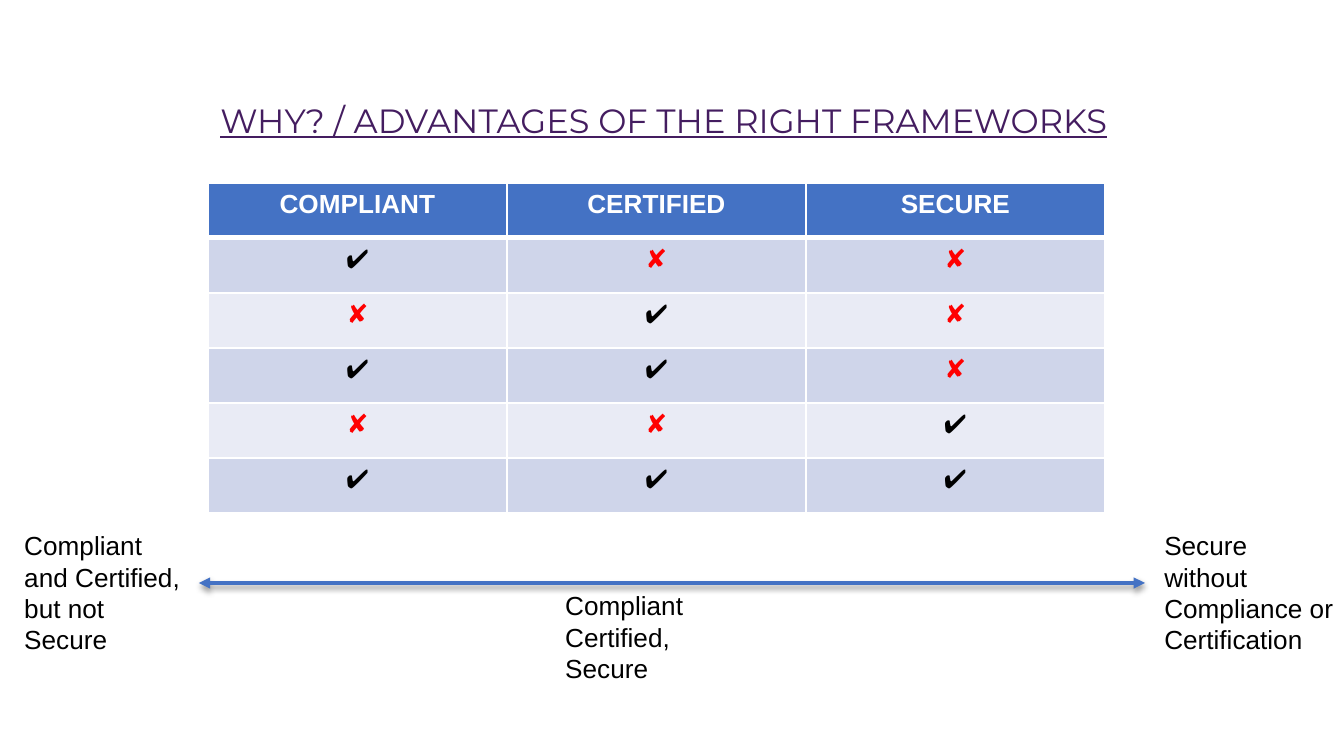
from lxml.etree import SubElement
from pptx import Presentation
from pptx.dml.color import RGBColor
from pptx.enum.shapes import MSO_CONNECTOR
from pptx.enum.text import MSO_ANCHOR, MSO_AUTO_SIZE, PP_ALIGN
from pptx.oxml import parse_xml
from pptx.oxml.ns import nsdecls, qn
from pptx.util import Emu, Pt

TITLE = "WHY? / ADVANTAGES OF THE RIGHT FRAMEWORKS"
HEADERS = ["COMPLIANT", "CERTIFIED", "SECURE"]
MARKS = ["✔✘✘", "✘✔✘", "✔✔✘", "✘✘✔", "✔✔✔"]
LABELS = [  # text, (left, top, width, height) in px
    ("Compliant and Certified, but not Secure", (11, 523, 184, 140)),
    ("Secure without Compliance or Certification", (1151, 523, 197, 140)),
    ("Compliant Certified, Secure", (552, 583, 184, 109)),
]
COLORS = {
    "title": "441D60", "accent": "4472C4", "white": "FFFFFF", "text": "000000",
    "cross": "FF0000", "odd": "CFD5EA", "even": "E9EBF5",
}
SLIDE_W, SLIDE_H = 1344, 756
TITLE_BOX = (46, 93, 1236, 54)
TABLE_LEFT, TABLE_TOP, COL_W, ROW_H = 208, 183, 299, 55
ARROW_LEFT, ARROW_RIGHT, ARROW_Y = 199, 1145, 583


def px(n):
    return Emu(round(n * 914400 / 134.4))


def rgb(name):
    return RGBColor.from_string(COLORS[name])


def write(tf, text, color="text", size=14, font="Arial", align=PP_ALIGN.LEFT,
          bold=False, underline=False):
    p = tf.paragraphs[0]
    p.alignment = align
    r = p.add_run()
    r.text = text
    f = r.font
    f.name, f.size, f.bold, f.underline = font, Pt(size), bold, underline
    f.color.rgb = rgb(color)


def set_borders(cell, bottom):
    """Give a cell white borders, 1 pt except for the bottom one."""
    tcPr = cell._tc.get_or_add_tcPr()
    widths = {"lnL": 1, "lnR": 1, "lnT": 1, "lnB": bottom}
    for i, (tag, width) in enumerate(widths.items()):
        tcPr.insert(i, parse_xml(
            f'<a:{tag} {nsdecls("a")} w="{Pt(width)}"><a:solidFill>'
            f'<a:srgbClr val="{COLORS["white"]}"/></a:solidFill></a:{tag}>'))


def add_marks_table(s):
    rows = [HEADERS, *MARKS]
    tbl = s.shapes.add_table(
        len(rows), len(HEADERS), px(TABLE_LEFT), px(TABLE_TOP),
        px(COL_W * len(HEADERS)), px(ROW_H * len(rows))).table
    for col in tbl.columns:
        col.width = px(COL_W)
    for i, row in enumerate(rows):
        header = i == 0
        fill = "accent" if header else "odd" if i % 2 else "even"
        for j, text in enumerate(row):
            cell = tbl.cell(i, j)
            cell.fill.solid()
            cell.fill.fore_color.rgb = rgb(fill)
            top_edge = 3 if i == 1 else 1
            set_borders(cell, bottom=3 if header else 1)
            if top_edge > 1:
                cell._tc.tcPr.find(qn("a:lnT")).set("w", str(Pt(top_edge)))
            color = "white" if header else "cross" if text == "✘" else "text"
            write(cell.text_frame, text, color=color, bold=header,
                  align=PP_ALIGN.CENTER)


def add_range_arrow(s):
    """Draw the double-headed arrow with its soft shadow."""
    line = s.shapes.add_connector(
        MSO_CONNECTOR.STRAIGHT, px(ARROW_LEFT), px(ARROW_Y),
        px(ARROW_RIGHT), px(ARROW_Y))
    line.line.color.rgb = rgb("accent")
    line.line.width = Pt(2)
    ln = line.line._get_or_add_ln()
    for end in ("a:headEnd", "a:tailEnd"):
        SubElement(ln, qn(end), type="triangle")
    ln.addnext(parse_xml(
        f'<a:effectLst {nsdecls("a")}><a:outerShdw blurRad="{Pt(3.1)}" '
        f'dist="{Pt(1.6)}" dir="5400000" rotWithShape="0">'
        f'<a:srgbClr val="{COLORS["text"]}"><a:alpha val="38000"/></a:srgbClr>'
        '</a:outerShdw></a:effectLst>'))


def main():
    prs = Presentation()
    prs.slide_width, prs.slide_height = px(SLIDE_W), px(SLIDE_H)
    s = prs.slides.add_slide(prs.slide_layouts[5])

    title = s.shapes.title
    title.left, title.top, title.width, title.height = map(px, TITLE_BOX)
    tf = title.text_frame
    tf.auto_size = MSO_AUTO_SIZE.NONE
    tf.vertical_anchor = MSO_ANCHOR.TOP
    write(tf, TITLE, color="title", size=18, font="Montserrat",
          align=PP_ALIGN.CENTER, underline=True)

    add_marks_table(s)
    add_range_arrow(s)
    for text, box in LABELS:
        tf = s.shapes.add_textbox(*map(px, box)).text_frame
        tf.word_wrap = True
        write(tf, text)

    prs.save("out.pptx")


if __name__ == "__main__":
    main()
